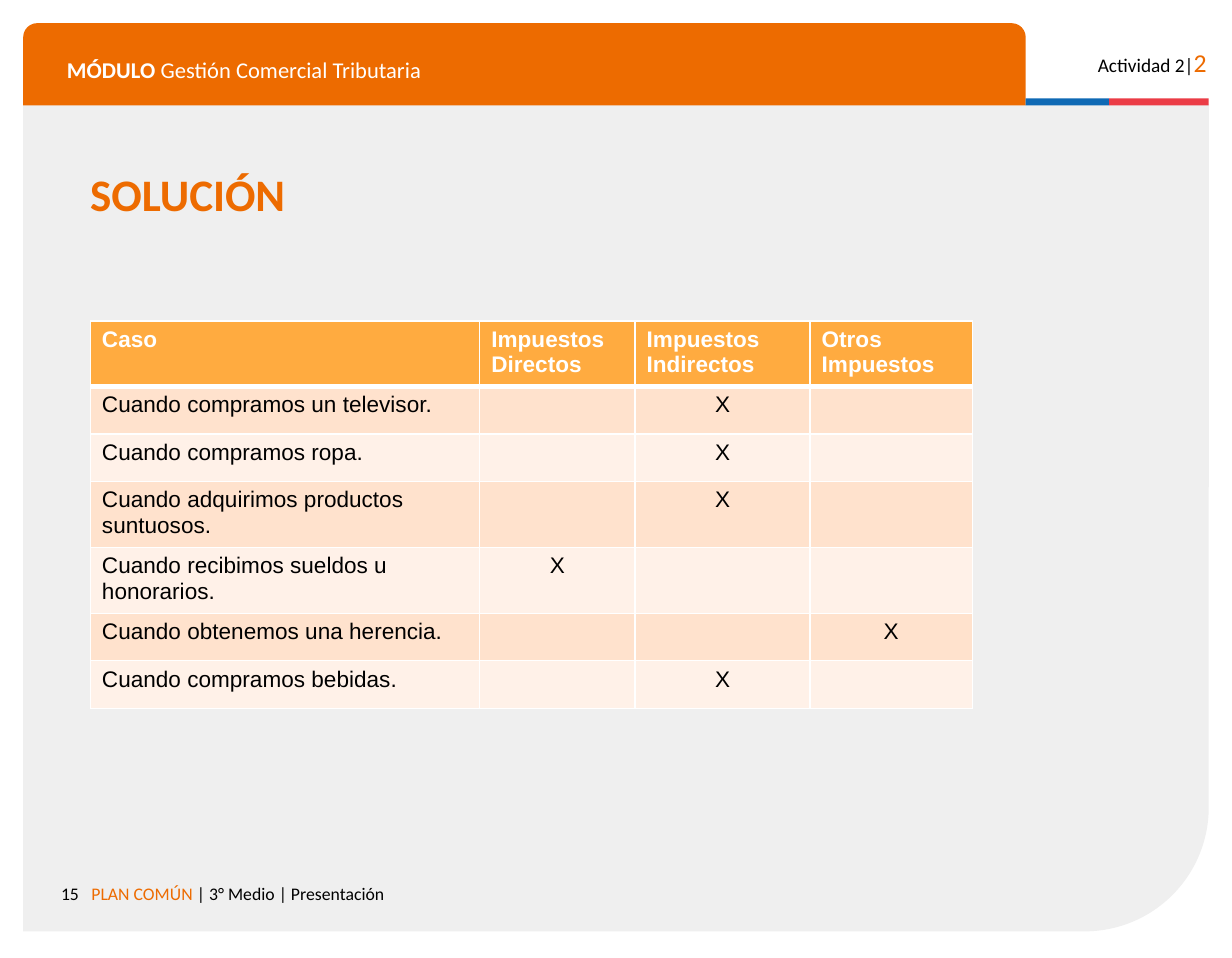
from dataclasses import dataclass

from lxml.etree import SubElement
from pptx import Presentation
from pptx.dml.color import RGBColor
from pptx.enum.shapes import MSO_SHAPE as SHAPE
from pptx.enum.text import MSO_ANCHOR as ANCHOR, PP_ALIGN as ALIGN
from pptx.oxml.ns import qn
from pptx.slide import Slide
from pptx.table import _Cell as Cell
from pptx.util import Emu, Pt

EMU_PER_PX = 9144
COLORS = {
    "white": "FFFFFF", "black": "000000", "gray": "EFEFEF", "orange": "ED6B00",
    "blue": "0F69B4", "red": "EB3C46", "header": "FFAB40",
    "band": "FFE2CD", "light": "FFF1E8",
}


@dataclass(frozen=True)
class Block:
    box: tuple[int, int, int, int]
    color: str
    kind: SHAPE = SHAPE.RECTANGLE
    adjustments: tuple[float, ...] = ()
    rotation: int = 0
    flip: bool = False


@dataclass(frozen=True)
class Run:
    text: str
    color: str
    size: int
    bold: bool = False


@dataclass(frozen=True)
class Label:
    box: tuple[int, int, int, int]
    runs: tuple[Run, ...]
    align: ALIGN = ALIGN.LEFT
    anchor: ANCHOR = ANCHOR.TOP
    spacing: float = 1.0


@dataclass(frozen=True)
class Case:
    text: str
    tax_column: int
    height: int = 41


BLOCKS = (
    Block((20, 90, 1023, 714), "gray", SHAPE.ROUND_1_RECTANGLE, (0.15,), 180, True),
    Block((20, 20, 865, 71), "orange", SHAPE.ROUND_2_SAME_RECTANGLE, (0.17, 0)),
    Block((885, 85, 72, 6), "blue"),
    Block((957, 85, 86, 6), "red"),
)
LABELS = (
    Label((48, 38, 814, 35), (Run("MÓDULO", "white", 14, True),
                              Run(" Gestión Comercial Tributaria", "white", 14))),
    Label((923, 30, 128, 38), (Run("Actividad 2|", "black", 12),
                               Run("2", "orange", 16)), ALIGN.RIGHT),
    Label((20, 753, 58, 29), (Run("15", "black", 11),), ALIGN.RIGHT),
    Label((69, 753, 714, 38), (Run("PLAN COMÚN ", "orange", 11),
                               Run("| 3° Medio | Presentación", "black", 11))),
    Label((68, 154, 979, 35), (Run("SOLUCIÓN", "orange", 28, True),),
          anchor=ANCHOR.MIDDLE, spacing=0.8),
)
HEADERS = ("Caso", "Impuestos Directos", "Impuestos\nIndirectos", "Otros Impuestos")
HEADER_HEIGHT = 54
COLUMN_WIDTHS = (336, 134, 151, 140)
CASES = (
    Case("Cuando compramos un televisor.", 2),
    Case("Cuando compramos ropa.", 2),
    Case("Cuando adquirimos productos suntuosos.", 2, 57),
    Case("Cuando recibimos sueldos u honorarios.", 1, 54),
    Case("Cuando obtenemos una herencia.", 3),
    Case("Cuando compramos bebidas.", 2),
)


def px(value: int) -> Emu:
    return Emu(value * EMU_PER_PX)


def rgb(name: str) -> RGBColor:
    return RGBColor.from_string(COLORS[name])


def add_block(s: Slide, block: Block) -> None:
    sp = s.shapes.add_shape(block.kind, *map(px, block.box))
    for i, value in enumerate(block.adjustments):
        sp.adjustments[i] = value
    sp.rotation = block.rotation
    if block.flip:
        sp._element.spPr.get_or_add_xfrm().set("flipH", "1")
    sp.fill.solid()
    sp.fill.fore_color.rgb = rgb(block.color)
    sp.line.fill.background()
    sp.shadow.inherit = False


def add_label(s: Slide, label: Label) -> None:
    tf = s.shapes.add_textbox(*map(px, label.box)).text_frame
    tf.word_wrap = True
    tf.vertical_anchor = label.anchor
    tf.margin_left = tf.margin_right = tf.margin_top = tf.margin_bottom = px(10)
    p = tf.paragraphs[0]
    p.alignment = label.align
    p.line_spacing = label.spacing
    p.font.name = "Calibri"
    for run in label.runs:
        r = p.add_run()
        r.text = run.text
        r.font.size = Pt(run.size)
        r.font.bold = run.bold
        r.font.color.rgb = rgb(run.color)


def add_border(cell: Cell, side: str, width: int) -> None:
    ln = SubElement(cell._tc.get_or_add_tcPr(), qn(f"a:ln{side}"), w=str(Pt(width)))
    fill = SubElement(ln, qn("a:solidFill"))
    SubElement(fill, qn("a:srgbClr"), val=COLORS["white"])


def fill_cell(cell: Cell, text: str, row: int, column: int) -> None:
    is_header = row == 0
    cell.text = text
    for p in cell.text_frame.paragraphs:
        p.alignment = ALIGN.LEFT if is_header or column == 0 else ALIGN.CENTER
        p.font.name = "Arial"
        p.font.size = Pt(14)
        p.font.bold = is_header
        p.font.color.rgb = rgb("white" if is_header else "black")
    cell.margin_left = cell.margin_right = px(10)
    cell.margin_top = cell.margin_bottom = px(5)
    for side in "LRTB":
        thick = (row, side) in ((0, "B"), (1, "T"))
        add_border(cell, side, 3 if thick else 1)
    cell.fill.solid()
    cell.fill.fore_color.rgb = rgb("header" if is_header else "band" if row % 2 else "light")


def add_tax_table(s: Slide) -> None:
    heights = [HEADER_HEIGHT] + [case.height for case in CASES]
    rows = [HEADERS] + [
        (case.text, *("X" if column == case.tax_column else ""
                      for column in range(1, len(HEADERS))))
        for case in CASES
    ]
    table = s.shapes.add_table(len(rows), len(HEADERS), px(78), px(277),
                               px(sum(COLUMN_WIDTHS)), px(sum(heights))).table
    for column, width in zip(table.columns, COLUMN_WIDTHS):
        column.width = px(width)
    for i, (texts, height) in enumerate(zip(rows, heights)):
        table.rows[i].height = px(height)
        for j, text in enumerate(texts):
            fill_cell(table.cell(i, j), text, i, j)


def main() -> None:
    prs = Presentation()
    prs.slide_width, prs.slide_height = px(1063), px(827)
    s = prs.slides.add_slide(prs.slide_layouts[6])
    for block in BLOCKS:
        add_block(s, block)
    for label in LABELS:
        add_label(s, label)
    add_tax_table(s)
    prs.save("out.pptx")


if __name__ == "__main__":
    main()
